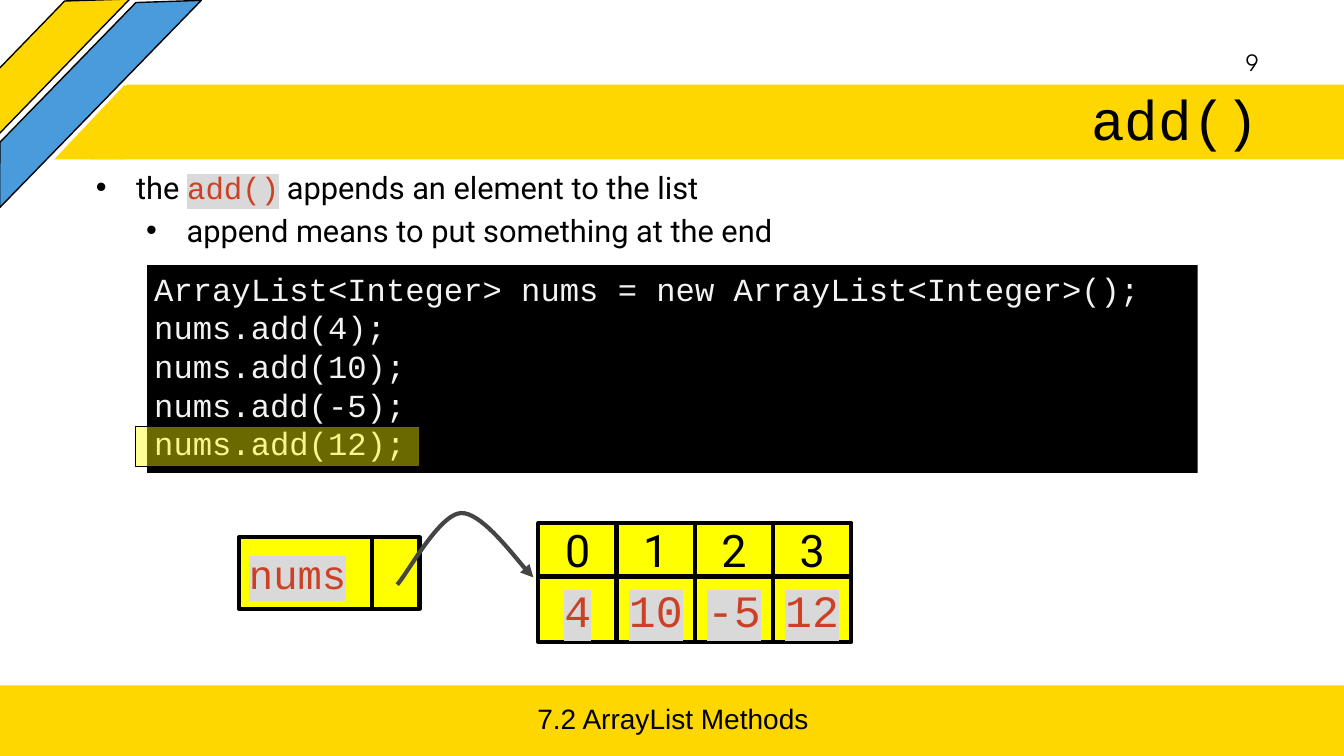
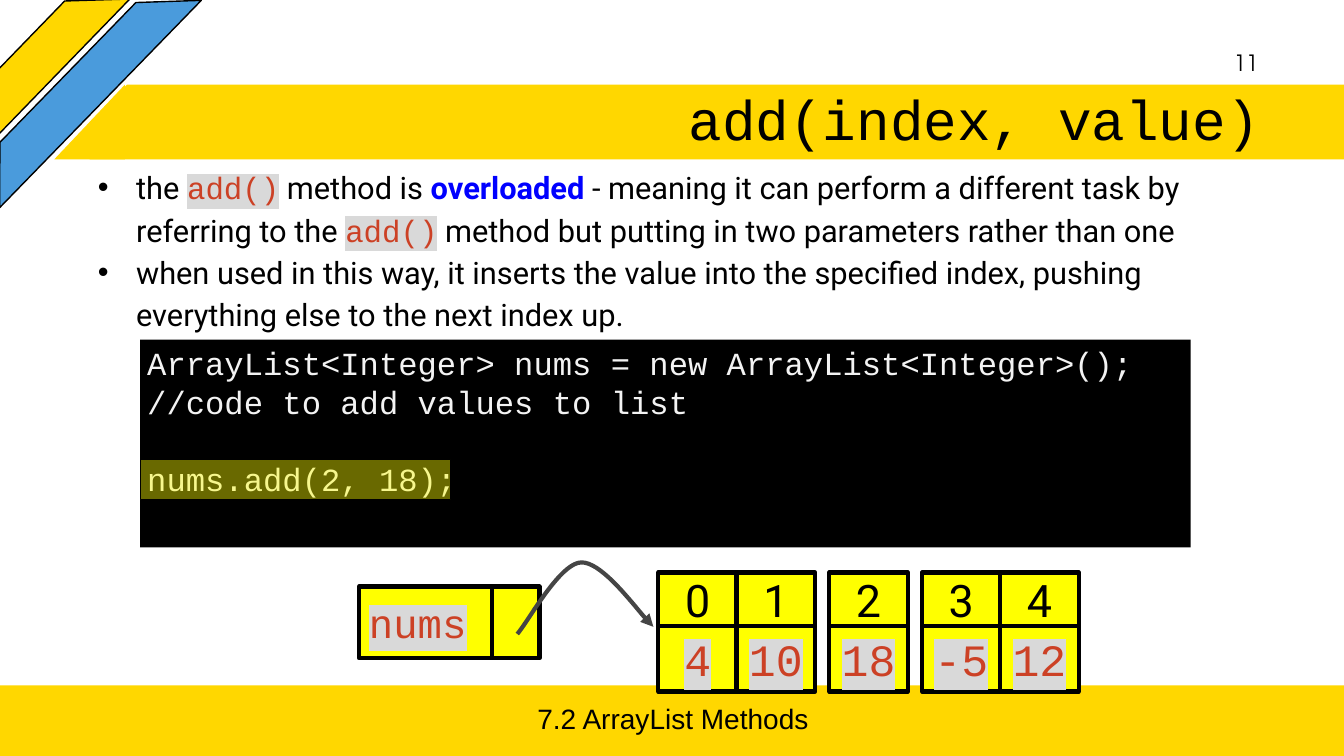
from dataclasses import dataclass

from lxml.etree import SubElement
from pptx import Presentation
from pptx.dml.color import RGBColor
from pptx.enum.shapes import MSO_SHAPE
from pptx.enum.text import MSO_ANCHOR, MSO_AUTO_SIZE, PP_ALIGN
from pptx.oxml.ns import qn
from pptx.util import Inches, Pt

COLORS = {
    "gold": "FFD700", "blue": "4A9BDC", "black": "000000", "cell": "FFFF00",
    "code": "CC4125", "code_back": "D9D9D9", "console": "F3F3F3",
    "keyword": "0000FF", "arrow": "454545",
}
MONO, SANS = "Courier New", "Roboto"
ARROW_CURVE = [
    [(0, 100), (8, 83), (31, 1), (47, 0)],
    [(47, 0), (64, -1), (91, 75), (100, 90)],
]
CURVE_STEPS = 20


@dataclass
class Box:
    """A rectangle whose inner areas are given in percent of its size."""
    left: float
    top: float
    width: float
    height: float

    def point(self, x, y):
        """Return the position at a percentage of the width and height."""
        return (round(self.left + self.width * x / 100),
                round(self.top + self.height * y / 100))

    def area(self, x, y, width, height):
        """Return the box that covers the given shares of this one."""
        return Box(*self.point(x, y), round(self.width * width / 100),
                   round(self.height * height / 100))

    def bounds(self):
        """Return the four lengths that python-pptx expects."""
        return self.left, self.top, self.width, self.height


PAGE = Box(0, 0, Inches(13.33), Inches(7.5))
TITLE_BAR = PAGE.area(10.43, 11.2, 84.02, 9.87)


def color(name):
    """Return a palette colour."""
    return RGBColor.from_string(COLORS[name])


def style(font, size, ink, face):
    """Set the size, colour and typeface of a font."""
    font.size, font.name = Pt(size), face
    font.color.rgb = color(ink)


def add_block(shapes, box, fill, line=None, kind=MSO_SHAPE.RECTANGLE, flip=False):
    """Add a flat preset shape with an optional black outline."""
    block = shapes.add_shape(kind, *box.bounds())
    block.shadow.inherit = False
    block.fill.solid()
    block.fill.fore_color.rgb = color(fill)
    if line:
        block.line.color.rgb = color("black")
        block.line.width = Pt(line)
    else:
        block.line.fill.background()
    if flip:
        block.element.spPr.find(qn("a:xfrm")).set("flipH", "1")
    return block


def set_frame(frame, anchor, inset_x=0.1, inset_y=0.05):
    """Prepare a wrapping text frame of fixed size."""
    frame.word_wrap, frame.auto_size = True, MSO_AUTO_SIZE.NONE
    frame.vertical_anchor = anchor
    frame.margin_left = frame.margin_right = Inches(inset_x)
    frame.margin_top = frame.margin_bottom = Inches(inset_y)


def add_label(shapes, box, text, align, size, face):
    """Add one line of black text."""
    frame = shapes.add_textbox(*box.bounds()).text_frame
    set_frame(frame, MSO_ANCHOR.MIDDLE)
    line = frame.paragraphs[0]
    line.text, line.alignment = text, align
    style(line.font, size, "black", face)


def mark_code(run):
    """Show a run as inline code on a grey highlight."""
    run.font.name = MONO
    run.font.color.rgb = color("code")
    props = run.font._element
    highlight = SubElement(props, qn("a:highlight"))
    SubElement(highlight, qn("a:srgbClr"), val=COLORS["code_back"])
    props.find(qn("a:solidFill")).addnext(highlight)


def mark_keyword(run):
    """Show a run as a bold keyword."""
    run.font.bold = True
    run.font.color.rgb = color("keyword")


MARKS = {"code": mark_code, "keyword": mark_keyword}


def draw_frame(shapes):
    """Draw the stripes, title bar and footer that all slides share."""
    add_block(shapes, PAGE.area(0, 90.67, 100, 9.33), "gold")
    for place, angle, slant, fill in (
        ((-3.45, 3.73, 14.03, 6), 314.1, 1.03, "gold"),
        ((-4.5, 8.67, 21.53, 6), 314.2, 1.04, "blue"),
    ):
        stripe = add_block(shapes, PAGE.area(*place), fill, 1, MSO_SHAPE.TRAPEZOID)
        stripe.rotation, stripe.adjustments[0] = angle, slant
    add_label(shapes, PAGE.area(1.65, 92.4, 96.85, 5.33),
              "7.2 ArrayList Methods", PP_ALIGN.CENTER, 20, "Arial")
    bar = add_block(shapes, PAGE.area(6.68, 11.2, 93.32, 9.87), "gold",
                    kind=MSO_SHAPE.SNIP_1_RECTANGLE, flip=True)
    bar.adjustments[0] = 0.5
    add_block(shapes, PAGE.area(4.05, 11.2, 5.25, 9.87), "gold",
              kind=MSO_SHAPE.RIGHT_TRIANGLE, flip=True)


def share_frame(slide, layout):
    """Draw the shared shapes and move them to the layout."""
    own = list(slide.shapes.element)
    draw_frame(slide.shapes)
    drawn = list(slide.shapes.element)[len(own):]
    for index, element in enumerate(drawn, 2):
        layout.shapes.element.insert(index, element)


def fill_title(title, text):
    """Place and format the slide title."""
    title.left, title.top, title.width, title.height = TITLE_BAR.bounds()
    set_frame(title.text_frame, MSO_ANCHOR.MIDDLE)
    line = title.text_frame.paragraphs[0]
    line.text, line.alignment, line.line_spacing = text, PP_ALIGN.RIGHT, 0.9
    style(line.font, 40, "black", MONO)


def fill_list(body, box, items, hang):
    """Fill the body placeholder with bulleted items of marked runs."""
    body.left, body.top, body.width, body.height = box.bounds()
    frame = body.text_frame
    set_frame(frame, MSO_ANCHOR.TOP)
    for index, (level, pieces) in enumerate(items):
        item = frame.add_paragraph() if index else frame.paragraphs[0]
        item.level, item.line_spacing = level, 1.15
        item.space_before = item.space_after = Pt(0)
        props = item._p.get_or_add_pPr()
        props.set("marL", str(Inches(0.5 * (level + 1))))
        props.set("indent", str(-Inches(hang)))
        SubElement(SubElement(props, qn("a:buClr")), qn("a:srgbClr"), val=COLORS["black"])
        SubElement(props, qn("a:buFont"), typeface="Arial")
        SubElement(props, qn("a:buChar"), char="•")
        style(item.font, 22, "black", SANS)
        for text, mark in pieces:
            run = item.add_run()
            run.text = text
            if mark:
                MARKS[mark](run)


def draw_code(shapes, box, lines, marked, mark_left, mark_width):
    """Draw a console with its code and a translucent bar on one line."""
    frame = add_block(shapes, box, "black").text_frame
    set_frame(frame, MSO_ANCHOR.TOP, 0.07, 0.04)
    for index, code in enumerate(lines):
        line = frame.add_paragraph() if index else frame.paragraphs[0]
        line.text, line.alignment = code, PP_ALIGN.LEFT
        style(line.font, 23, "console", MONO)
    marker = add_block(shapes, box.area(mark_left, 19.9 * marked - 1.93, mark_width, 19.42),
                       "cell", 0.75)
    tint = marker.element.spPr.find(qn("a:solidFill")).find(qn("a:srgbClr"))
    SubElement(tint, qn("a:alpha"), val="41000")


def draw_cell(shapes, box, text, size, align=PP_ALIGN.CENTER, code=True):
    """Draw one memory cell."""
    frame = add_block(shapes, box, "cell", 3).text_frame
    set_frame(frame, MSO_ANCHOR.MIDDLE, 0.1, 0.1)
    line = frame.paragraphs[0]
    line.alignment = align
    style(line.font, size, "black", SANS)
    run = line.add_run()
    run.text = text
    if code:
        mark_code(run)


def bezier(curve, t):
    """Return the point of a cubic curve at t."""
    weights = ((1 - t) ** 3, 3 * t * (1 - t) ** 2, 3 * t * t * (1 - t), t ** 3)
    return tuple(sum(w * p[axis] for w, p in zip(weights, curve)) for axis in (0, 1))


def draw_arrow(shapes, box):
    """Draw the curved reference arrow."""
    route = [box.point(*bezier(curve, step / CURVE_STEPS))
             for curve in ARROW_CURVE for step in range(1, CURVE_STEPS + 1)]
    builder = shapes.build_freeform(*box.point(0, 100))
    builder.add_line_segments(route, close=False)
    arrow = builder.convert_to_shape()
    arrow.shadow.inherit = False
    arrow.fill.background()
    arrow.line.color.rgb, arrow.line.width = color("arrow"), Pt(3)
    SubElement(arrow.line._get_or_add_ln(), qn("a:tailEnd"), type="triangle")


def draw_memory(shapes, box, groups):
    """Draw the variable, its reference and the groups of list cells."""
    draw_cell(shapes, box.area(0, 11.67, 16.88, 59.17), "nums", 29, PP_ALIGN.LEFT)
    add_block(shapes, box.area(16.5, 11.67, 5.88, 59.17), "cell", 3)
    pitch, gap, left, position = 9.69, 1.81, 37.13, 0
    for group in groups:
        for value in group:
            draw_cell(shapes, box.area(left, 0, 9.75, 44.17), str(position), 32, code=False)
            draw_cell(shapes, box.area(left, 44.17, 9.75, 54.17), str(value), 32)
            left, position = left + pitch, position + 1
        left += gap
    draw_arrow(shapes, box.area(19.63, -8.33, 16.88, 59.17))


def build_slide(slide, number, title, bullets, code, memory):
    """Build one method slide from its regions."""
    shapes = slide.shapes
    fill_title(shapes.title, title)
    height, items, hang = bullets
    fill_list(slide.placeholders[1], PAGE.area(5.63, 20.93, 88.75, height), items, hang)
    add_label(shapes, PAGE.area(71.87, 5.6, 22.5, 5.33), number,
              PP_ALIGN.RIGHT, 16, "TeX Gyre Adventor")
    corner, *listing = code
    draw_code(shapes, PAGE.area(*corner, 78.17, 27.47), *listing)
    corner, groups = memory
    draw_memory(shapes, PAGE.area(*corner, 60, 16), groups)


DECLARATION = "ArrayList<Integer> nums = new ArrayList<Integer>();"
SLIDES = [
    dict(
        number="9", title="add()",
        bullets=(16.93, [
            (0, [("the ", None), ("add()", "code"),
                 (" appends an element to the list", None)]),
            (1, [("append means to put something at the end", None)]),
        ], 0.4),
        code=((10.95, 35.07), [DECLARATION, "nums.add(4);", "nums.add(10);",
                               "nums.add(-5);", "nums.add(12);"], 4, -1.15, 27.06),
        memory=((17.78, 69.2), [[4, 10, -5, 12]]),
    ),
    dict(
        number="11", title="add(index, value)",
        bullets=(24.93, [
            (0, [("the ", None), ("add()", "code"), (" method is ", None),
                 ("overloaded", "keyword"),
                 (" - meaning it can perform a different task by referring to the ", None),
                 ("add()", "code"),
                 (" method but putting in two parameters rather than one", None)]),
            (0, [("when used in this way, it inserts the value into the specified index, "
                  "pushing everything else to the next index up.", None)]),
        ], 0.38),
        code=((10.43, 44.93), [DECLARATION, "//code to add values to list", "",
                               "nums.add(2, 18);"], 3, 0, 29.56),
        memory=((26.71, 75.73), [[4, 10], [18], [-5, 12]]),
    ),
]


def main():
    """Build and save the presentation."""
    prs = Presentation()
    prs.slide_width, prs.slide_height = PAGE.width, PAGE.height
    layout = prs.slide_layouts[1]
    for spare in list(layout.placeholders)[2:]:
        layout.shapes.element.remove(spare.element)
    pages = [prs.slides.add_slide(layout) for _ in SLIDES]
    share_frame(pages[0], layout)
    for page, content in zip(pages, SLIDES):
        build_slide(page, **content)
    prs.save("out.pptx")


if __name__ == "__main__":
    main()
